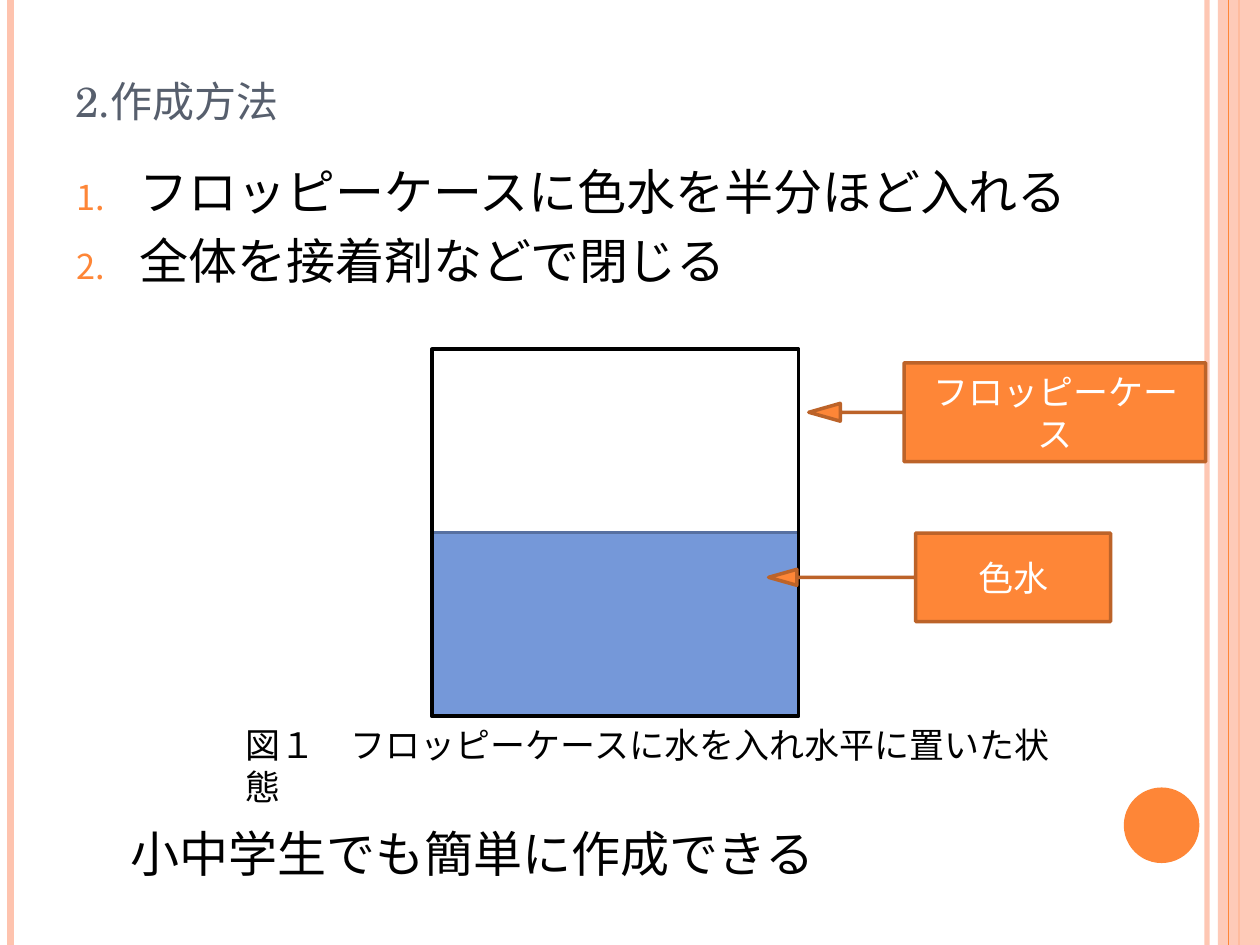
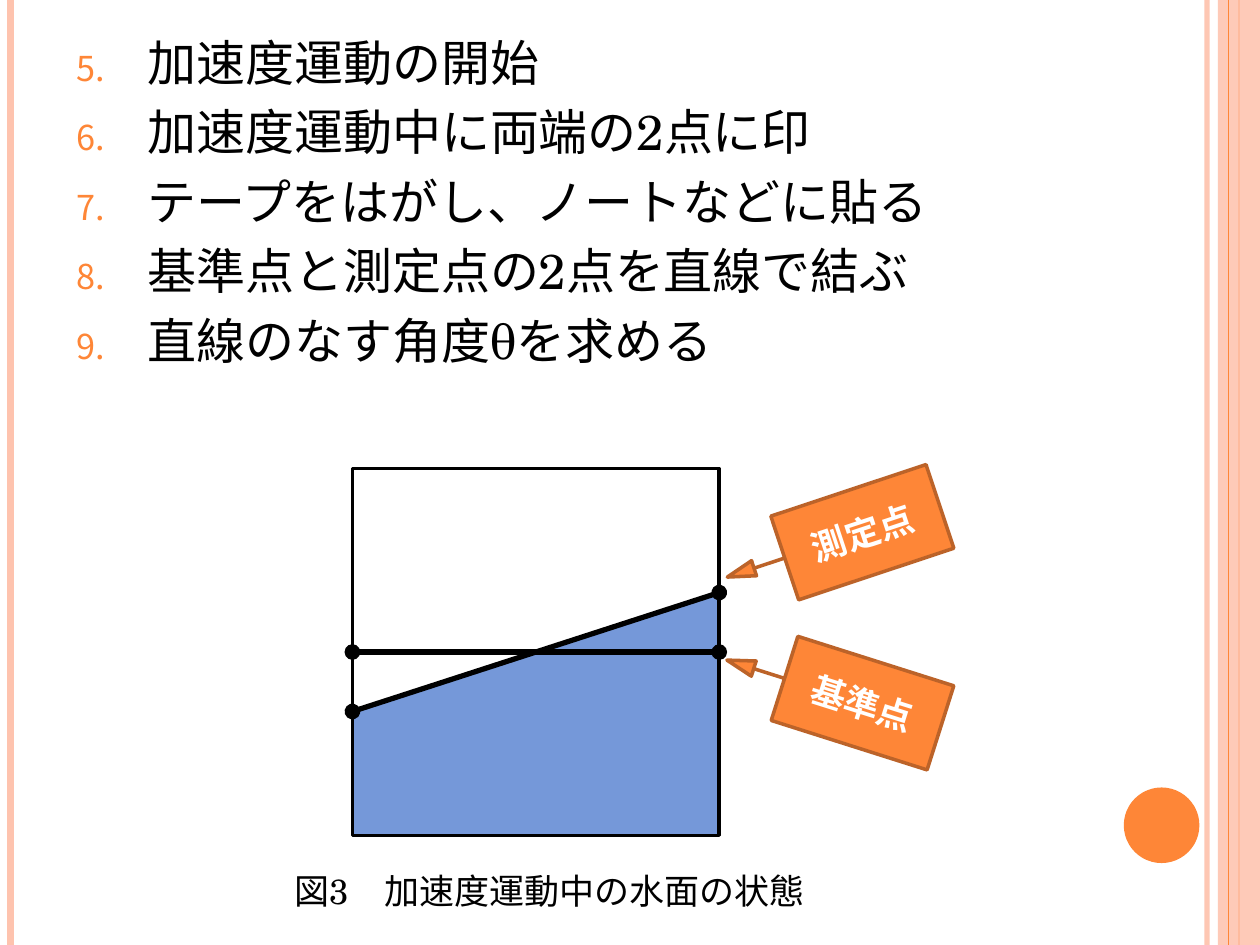
import pptx
import pptx.dml.color
import pptx.enum.shapes
import pptx.enum.text
import pptx.oxml
import pptx.oxml.ns
import pptx.util

Pt = pptx.util.Pt
SHAPE = pptx.enum.shapes.MSO_SHAPE
ALIGN = pptx.enum.text.PP_ALIGN
ANCHOR = pptx.enum.text.MSO_ANCHOR

FONT = "TeX Gyre Schola"
WIDTH, HEIGHT = 720, 540
BLACK, WHITE, SLATE = "000000", "FFFFFF", "575F6D"
ORANGE, RUST, PEACH = "FE8637", "BC6329", "FEC3AE"
WATER, WATER_EDGE = "7598D9", "5770A1"
CASE_SIDE = 209.6


def rgb(color):
    return pptx.dml.color.RGBColor.from_string(color)


def add_xml(parent, tag, **attrs):
    el = pptx.oxml.parse_xml(f"<a:{tag} {pptx.oxml.ns.nsdecls('a')}/>")
    for name, value in attrs.items():
        el.set(name, str(value))
    parent.append(el)
    return el


def set_alpha(fill, percent):
    color = fill._xPr.find(".//" + pptx.oxml.ns.qn("a:srgbClr"))
    add_xml(color, "alpha", val=percent * 1000)


def add_shape(shapes, kind, box, fill=None, line=None, weight=2):
    sp = shapes.add_shape(kind, *map(Pt, box))
    sp.shadow.inherit = False
    if fill:
        sp.fill.solid()
        sp.fill.fore_color.rgb = rgb(fill)
    else:
        sp.fill.background()
    if line:
        sp.line.color.rgb = rgb(line)
        sp.line.width = Pt(weight)
    else:
        sp.line.fill.background()
    return sp


def add_line(shapes, start, end, color, weight, dots=False):
    straight = pptx.enum.shapes.MSO_CONNECTOR.STRAIGHT
    cxn = shapes.add_connector(straight, *map(Pt, start + end))
    cxn.line.color.rgb = rgb(color)
    cxn.line.width = Pt(weight)
    if dots:
        for tag in ("headEnd", "tailEnd"):
            add_xml(cxn.line._get_or_add_ln(), tag, type="oval")
    add_xml(cxn._element.spPr, "effectLst")
    return cxn


def add_run(p, text, size, color, bold=False):
    r = p.add_run()
    r.text = text
    r.font.name = FONT
    r.font.size = Pt(size)
    r.font.color.rgb = rgb(color)
    r.font.bold = bold
    return r


def add_text_frame(slide, box, anchor=ANCHOR.TOP):
    tf = slide.shapes.add_textbox(*map(Pt, box)).text_frame
    tf.word_wrap = True
    tf.vertical_anchor = anchor
    return tf


def add_text(slide, box, text, size):
    add_run(add_text_frame(slide, box).paragraphs[0], text, size, BLACK)


def add_title(slide, box, text):
    tf = add_text_frame(slide, box, ANCHOR.BOTTOM)
    r = add_run(tf.paragraphs[0], text, 30, SLATE)
    r.font._element.set("cap", "small")


def add_steps(slide, box, steps, indent, start=1):
    """Numbered list with small orange numbers."""
    tf = add_text_frame(slide, box)
    for i, step in enumerate(steps):
        p = tf.paragraphs[0] if i == 0 else tf.add_paragraph()
        p.space_before = Pt(6)
        pPr = p._p.get_or_add_pPr()
        pPr.set("marL", str(Pt(indent)))
        pPr.set("indent", str(-Pt(indent)))
        add_xml(add_xml(pPr, "buClr"), "srgbClr", val=ORANGE)
        add_xml(pPr, "buSzPct", val=70000)
        add_xml(pPr, "buFont", typeface="+mj-ea")
        add_xml(pPr, "buAutoNum", type="arabicPeriod", startAt=start)
        add_run(p, step, 28, BLACK)


def add_label(shapes, box, text, body, angle=0, bold=False):
    """Box with an arrow to the left; body is the box's share of the width."""
    sp = add_shape(shapes, SHAPE.LEFT_ARROW_CALLOUT, box, ORANGE, RUST)
    for i, value in enumerate((0, 0.09, 0.319, body)):
        sp.adjustments[i] = value
    sp.rotation = angle
    tf = sp.text_frame
    tf.word_wrap = True
    tf.vertical_anchor = ANCHOR.MIDDLE
    p = tf.paragraphs[0]
    p.alignment = ALIGN.CENTER
    add_run(p, text, 20, WHITE, bold)


def add_frame(slide):
    """Edge bands and the page disc found on every slide."""
    def rule(x, color, weight):
        return add_line(slide.shapes, (x, 0), (x, HEIGHT), color, weight)

    set_alpha(rule(689.8, PEACH, 3).line.fill, 93)
    rule(6, PEACH, 4.5)
    rule(708, ORANGE, 1.5)
    band = add_shape(slide.shapes, SHAPE.RECTANGLE, (696, 0, WIDTH - 696, HEIGHT), PEACH)
    set_alpha(band.fill, 87)
    rule(702, ORANGE, 0.75)
    add_shape(slide.shapes, SHAPE.OVAL, (642.2, 450, 43.2, 43.2), ORANGE)


def add_level_case(slide, x, y):
    shapes = slide.shapes.add_group_shape().shapes
    half = CASE_SIDE / 2
    add_shape(shapes, SHAPE.RECTANGLE, (x, y + half, CASE_SIDE, half), WATER, WATER_EDGE)
    add_shape(shapes, SHAPE.RECTANGLE, (x, y, CASE_SIDE, CASE_SIDE), None, BLACK)


def add_tilted_case(slide, x, y, rise):
    """Case whose water surface rises to the right by rise about its middle."""
    shapes = slide.shapes.add_group_shape().shapes
    right, middle = x + CASE_SIDE, y + CASE_SIDE / 2
    high, low = middle - rise / 2, middle + rise / 2
    wedge = add_shape(shapes, SHAPE.RIGHT_TRIANGLE, (x, high, CASE_SIDE, rise), WATER)
    wedge._element.spPr.get_or_add_xfrm().set("flipH", "1")
    overlap = 0.5  # hides the seam between wedge and block
    block_top = low - overlap
    add_shape(shapes, SHAPE.RECTANGLE, (x, block_top, CASE_SIDE, y + CASE_SIDE - block_top), WATER)
    add_shape(shapes, SHAPE.RECTANGLE, (x, y, CASE_SIDE, CASE_SIDE), None, BLACK)
    add_line(shapes, (x, middle), (right, middle), BLACK, 3, dots=True)
    add_line(shapes, (x, low), (right, high), BLACK, 3, dots=True)
    for text, top, angle in (("基準点", 103.6, 17.6), ("測定点", 16.6, 341.6)):
        add_label(shapes, (right + 1.4, y + top, 128, 50.4), text, 0.73, angle, bold=True)


def build_making_slide(slide):
    add_frame(slide)
    add_title(slide, (36, 21.6, 588, 55.4), "2.作成方法")
    steps = ("フロッピーケースに色水を半分ほど入れる", "全体を接着剤などで閉じる")
    add_steps(slide, (36.7, 88.6, 588, 102), steps, 36)
    add_text(slide, (67.7, 467.3, 499, 41), "小中学生でも簡単に作成できる", 28)
    add_level_case(slide, 246.8, 199.6)
    add_text(slide, (133.2, 409.7, 479, 31.7), "図１　フロッピーケースに水を入れ水平に置いた状態", 20)
    add_label(slide.shapes, (439.2, 304.6, 195.4, 50.6), "色水", 0.57)
    add_label(slide.shapes, (462.2, 207.4, 226.8, 56.4), "フロッピーケース", 0.76)


def build_measuring_slide(slide):
    add_frame(slide)
    steps = ("加速度運動の開始", "加速度運動中に両端の2点に印",
             "テープをはがし、ノートなどに貼る",
             "基準点と測定点の2点を直線で結ぶ", "直線のなす角度θを求める")
    add_steps(slide, (36.7, 15.1, 588, 136), steps, 40.5, start=5)
    add_text(slide, (161.3, 493.2, 366.5, 31.7), "図3　加速度運動中の水面の状態", 20)
    add_tilted_case(slide, 201.4, 267.8, 68)


def main():
    prs = pptx.Presentation()
    prs.slide_width, prs.slide_height = Pt(WIDTH), Pt(HEIGHT)
    for build in (build_making_slide, build_measuring_slide):
        build(prs.slides.add_slide(prs.slide_layouts[6]))
    prs.save("out.pptx")


if __name__ == "__main__":
    main()
